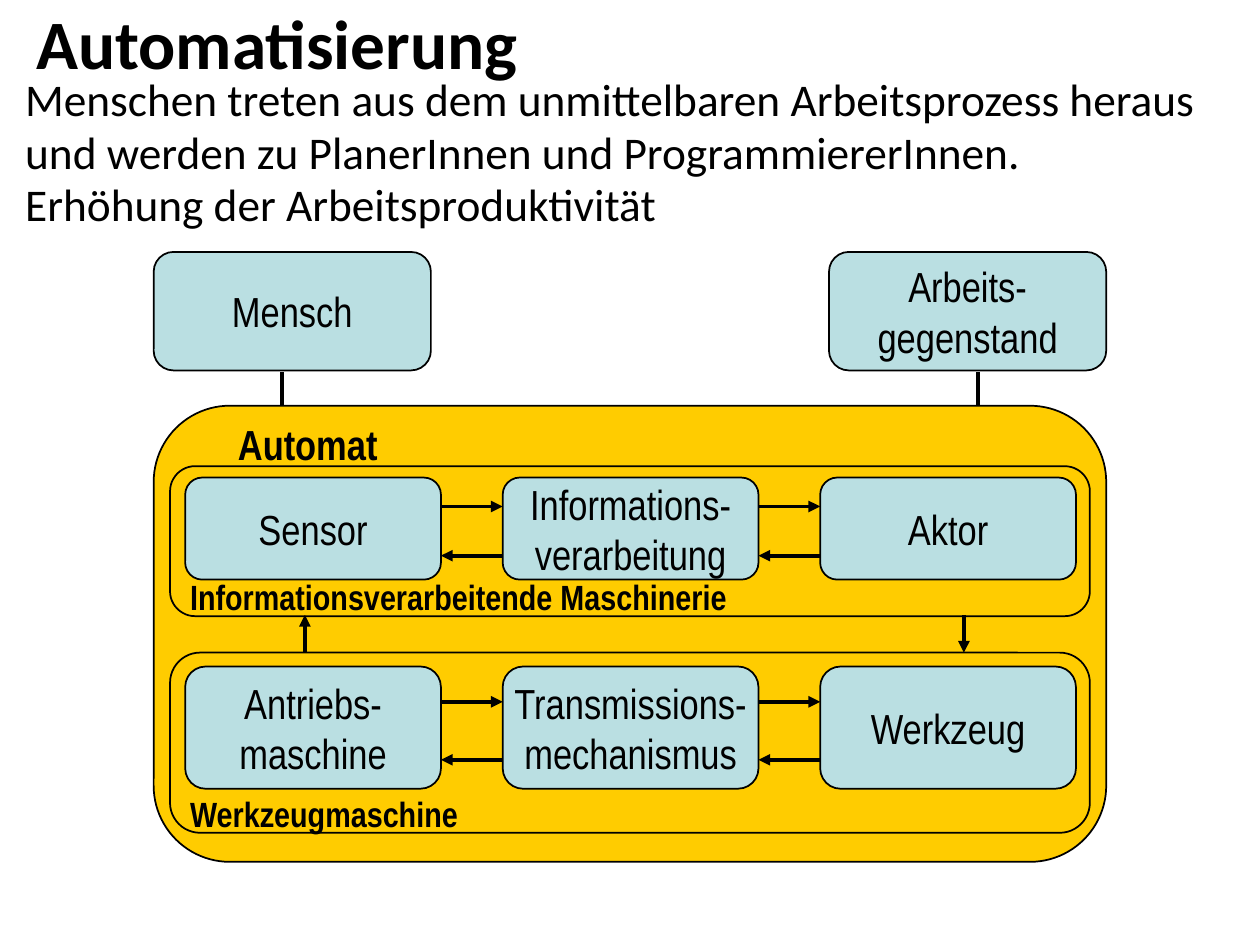
"""Build the slide on automation: a human, a work object and the automaton between them."""
from lxml import etree
from pptx import Presentation, util as u
from pptx.dml.color import RGBColor
from pptx.enum import shapes, text
from pptx.oxml import ns

COLORS = {"ink": "000000", "box": "BADFE2", "automaton": "FFCC00"}
TITLE = "Automatisierung"
BODY = [
    "Menschen treten aus dem unmittelbaren Arbeitsprozess heraus",
    "und werden zu PlanerInnen und ProgrammiererInnen.",
    "Erhöhung der Arbeitsproduktivität",
]
PARTNERS = [(1.22, 2.24, ["Mensch"]), (6.58, 7.76, ["Arbeits-", "gegenstand"])]
MACHINES = [
    {
        "name": "Informationsverarbeitende Maschinerie",
        "frame": (3.7, 1.19), "boxes": (3.79, 0.81), "arrows": (4.02, 4.41), "label": 4.52,
        "parts": [["Sensor"], ["Informations-", "verarbeitung"], ["Aktor"]],
    },
    {
        "name": "Werkzeugmaschine",
        "frame": (5.18, 1.43), "boxes": (5.29, 0.97), "arrows": (5.57, 6.03), "label": 6.24,
        "parts": [["Antriebs-", "maschine"], ["Transmissions-", "mechanismus"], ["Werkzeug"]],
    },
]
COLUMN_LEFT, COLUMN_WIDTH, COLUMN_GAP = 1.47, 2.03, 0.49
FRAME_LEFT, FRAME_WIDTH = 1.35, 7.3
MIDDLE = text.MSO_ANCHOR.MIDDLE
CENTER = text.PP_ALIGN.CENTER

presentation = Presentation()
presentation.slide_width, presentation.slide_height = u.Inches(10), u.Inches(7.5)
slide = presentation.slides.add_slide(presentation.slide_layouts[6])


def color(name):
    return RGBColor.from_string(COLORS[name])


def apply(target, values):
    for name, value in values.items():
        setattr(target, name, value)


def write(shape, lines, font, frame=None, paragraph_format=None, gap=0):
    apply(shape.text_frame, {"word_wrap": True, **(frame or {})})
    for index, line in enumerate(lines):
        paragraph = shape.text_frame.paragraphs[0] if index == 0 else shape.text_frame.add_paragraph()
        paragraph.text = line
        apply(paragraph, paragraph_format or {})
        if index and gap:
            paragraph.space_before = u.Pt(gap)
        apply(paragraph.font, font)
        paragraph.font.color.rgb = color("ink")


def add_text(area, lines, font, **options):
    write(slide.shapes.add_textbox(*map(u.Inches, area)), lines, font, **options)


def add_box(area, fill=None, lines=()):
    shape = slide.shapes.add_shape(shapes.MSO_SHAPE.ROUNDED_RECTANGLE, *map(u.Inches, area))
    shape.shadow.inherit = False
    shape.adjustments[0] = 0.167
    if fill:
        shape.fill.solid()
        shape.fill.fore_color.rgb = color(fill)
    else:
        shape.fill.background()
    shape.line.color.rgb = color("ink")
    shape.line.width = u.Pt(1)
    write(shape, lines, {"name": "Arial Narrow", "size": u.Pt(24)},
          {"word_wrap": False, "vertical_anchor": MIDDLE}, {"alignment": CENTER})


def add_line(start, end, arrow=True):
    line = slide.shapes.add_connector(shapes.MSO_CONNECTOR.STRAIGHT, *map(u.Inches, (*start, *end)))
    line.line.color.rgb = color("ink")
    line.line.width = u.Pt(2.25)
    if arrow:
        etree.SubElement(line.line._get_or_add_ln(), ns.qn("a:tailEnd"), type="triangle")
    etree.SubElement(line._element.spPr, ns.qn("a:effectLst"))


def add_machine(machine):
    top, height = machine["frame"]
    add_box((FRAME_LEFT, top, FRAME_WIDTH, height))
    box_top, box_height = machine["boxes"]
    forward, backward = machine["arrows"]
    for column, lines in enumerate(machine["parts"]):
        left = COLUMN_LEFT + column * (COLUMN_WIDTH + COLUMN_GAP)
        add_box((left, box_top, COLUMN_WIDTH, box_height), "box", lines)
        if column:
            add_line((left - COLUMN_GAP, forward), (left, forward))
            add_line((left, backward), (left - COLUMN_GAP, backward))
    add_text((1.41, machine["label"], 6.92, 0.43), [machine["name"]],
             {"name": "Arial Narrow", "size": u.Pt(20), "bold": True})


add_text((0.19, 0.06, 9.41, 0.54), [TITLE], {"name": "Calibri", "size": u.Pt(39.6), "bold": True},
         frame={"vertical_anchor": MIDDLE})
add_text((0, 0.6, 10, 1.5), BODY, {"name": "Calibri", "size": u.Pt(25.9)},
         frame={"margin_left": u.Inches(0.2)}, paragraph_format={"line_spacing": 0.8}, gap=5.2)
for left, stem, lines in PARTNERS:
    add_box((left, 2, 2.2, 0.94), "box", lines)
    add_line((stem, 3.26), (stem, 2.95), arrow=False)
add_box((1.22, 3.22, 7.56, 3.62), "automaton")
add_text((1.79, 3.27, 2.19, 0.5), ["Automat"], {"name": "Arial Narrow", "size": u.Pt(24), "bold": True})
add_line((2.42, 5.18), (2.42, 4.88))
add_line((7.65, 4.88), (7.65, 5.18))
for machine in MACHINES:
    add_machine(machine)
presentation.save("out.pptx")
